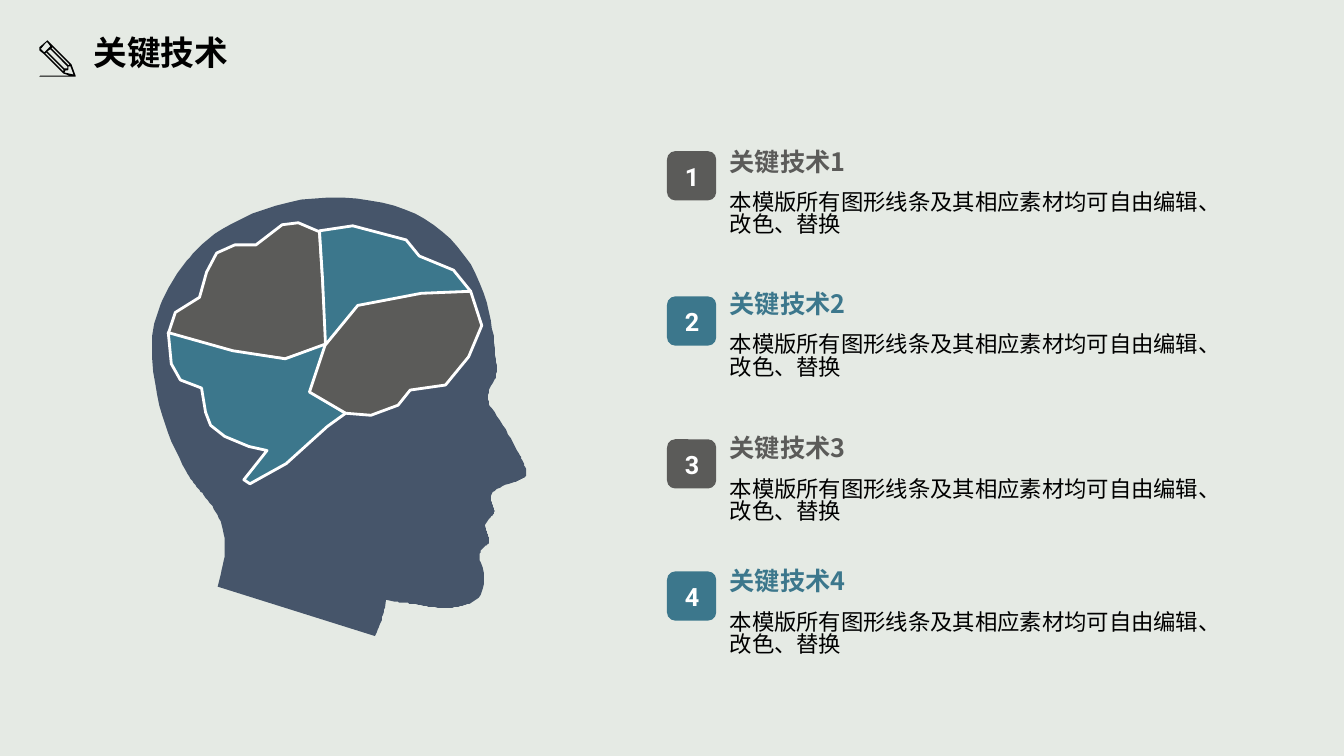
from pptx import Presentation
from pptx.dml.color import RGBColor
from pptx.enum import shapes as es, text as et
from pptx.oxml.ns import qn
from pptx.util import Cm, Pt

SANS = "Noto Sans CJK SC"
GREY, TEAL, NAVY = "5B5B59", "3C778C", "46556A"
WHITE, BLACK = "FFFFFF", "000000"
UNIT = Cm(0.0254)  # outline points are in hundredths of an inch
hue = RGBColor.from_string


def write(shape, words, size, color, font=SANS, bold=True,
          align=et.PP_ALIGN.LEFT, inset=(0.25, 0.13), space=0.83):
    frame = shape.text_frame
    frame.word_wrap = True
    frame.auto_size = et.MSO_AUTO_SIZE.NONE
    frame.vertical_anchor = et.MSO_ANCHOR.TOP
    frame.margin_left = frame.margin_right = Cm(inset[0])
    frame.margin_top = frame.margin_bottom = Cm(inset[1])
    para = frame.paragraphs[0]
    para.alignment = align
    para.line_spacing = space
    run = para.add_run()
    run.text = words
    run.font.size = Pt(size)
    run.font.bold = bold
    run.font.name = font
    run.font.color.rgb = hue(color)
    east = run.font._element.makeelement(qn("a:ea"), {"typeface": font})
    run.font._element.find(qn("a:latin")).addnext(east)


def draw(rings, fill, line=None):
    """Fill closed rings of points; later rings cut holes in the first."""
    pen = slide.shapes.build_freeform(*rings[0][0], scale=float(UNIT))
    pen.add_line_segments(rings[0][1:], close=True)
    for ring in rings[1:]:
        pen.move_to(*ring[0])
        pen.add_line_segments(ring[1:], close=True)
    shape = pen.convert_to_shape()
    shape.shadow.inherit = False
    shape.fill.solid()
    shape.fill.fore_color.rgb = hue(fill)
    if line:
        shape.line.color.rgb = hue(line)
        shape.line.width = Pt(2)
    else:
        shape.line.fill.background()


deck = Presentation()
deck.slide_width, deck.slide_height = Cm(33.87), Cm(19.05)
slide = deck.slides.add_slide(deck.slide_layouts[5])
slide.background.fill.solid()
slide.background.fill.fore_color.rgb = hue("E5EAE4")

title = slide.shapes.title
title.left, title.top, title.width, title.height = Cm(2.11), Cm(0.84), Cm(6.5), Cm(1.27)
write(title, "关键技术", 24, BLACK)

# Head: two numbers are a corner, six are a Bezier curve
head = [(516, 452)]
for step in [
    (512, 444, 498, 419, 488, 405), (481, 396, 484, 388, 490, 378),
    (494, 372, 493, 365, 491, 348), (491, 347, 491, 346, 491, 345),
    (489, 325, 483, 278, 454, 245), (426, 211, 385, 196, 326, 196),
    (271, 196, 221, 224, 201, 242), (193, 250, 178, 265, 167, 286),
    (154, 309, 149, 333, 151, 356), (155, 408, 170, 440, 185, 468),
    (191, 478, 197, 485, 202, 491), (211, 502, 219, 511, 222, 530),
    (225, 547, 221, 566, 216, 582), (372, 631),
    (376, 623, 380, 611, 382, 603), (383, 595), (392, 597),
    (394, 597, 397, 598, 401, 598), (403, 598, 407, 599, 410, 599),
    (419, 601, 431, 603, 442, 603), (452, 603, 459, 601, 466, 599),
    (480, 592, 484, 579, 477, 558), (474, 550, 476, 547, 482, 541),
    (483, 541, 483, 540, 484, 540), (488, 536, 482, 527, 482, 524),
    (481, 521), (485, 515), (488, 511, 492, 510, 490, 505),
    (489, 502, 488, 499, 487, 496), (485, 487, 498, 482, 511, 478),
    (515, 476, 520, 475, 522, 472), (524, 466, 518, 457, 516, 452),
]:
    if len(step) == 2:
        head.append(step)
        continue
    x0, y0 = head[-1]
    x1, y1, x2, y2, x3, y3 = step
    for i in range(1, 13):
        t = i / 12
        a, b, c, d = (1 - t) ** 3, 3 * t * (1 - t) ** 2, 3 * t * t * (1 - t), t ** 3
        head.append((a * x0 + b * x1 + c * x2 + d * x3,
                     a * y0 + b * y1 + c * y2 + d * y3))
draw([head], NAVY)

lobes = [
    (GREY, [(320, 276), (317, 230), (296, 221), (280, 223), (254, 243), (233, 243),
            (215, 251), (205, 270), (198, 295), (174, 310), (167, 331), (231, 349),
            (283, 356), (324, 342)]),
    (TEAL, [(308, 389), (324, 341), (283, 356), (231, 348), (167, 330), (170, 361),
            (179, 377), (200, 385), (204, 409), (209, 422), (223, 433), (247, 443),
            (265, 447), (242, 476), (248, 480), (284, 460), (325, 423), (343, 410)]),
    (GREY, [(467, 289), (418, 290), (355, 302), (323, 341), (307, 389), (343, 410),
            (368, 412), (395, 402), (407, 387), (442, 382), (465, 354), (478, 323)]),
    (TEAL, [(450, 268), (416, 254), (403, 238), (350, 224), (317, 229), (320, 276),
            (323, 342), (355, 303), (418, 291), (467, 289)]),
]
for color, edge in lobes:
    draw([edge], color, WHITE)

body = "本模版所有图形线条及其相应素材均可自由编辑、改色、替换"
# Badge top, heading top, body width
rows = [(3.81, 3.68, 12.93), (7.47, 7.26, 13.26), (11.07, 10.9, 12.93), (14.4, 14.25, 12.7)]
for n, (top, head_top, wide) in enumerate(rows, 1):
    color = GREY if n % 2 else TEAL
    badge = slide.shapes.add_shape(es.MSO_SHAPE.ROUNDED_RECTANGLE,
                                   Cm(16.81), Cm(top), Cm(1.24), Cm(1.24))
    label = slide.shapes.add_shape(es.MSO_SHAPE.RECTANGLE,
                                   Cm(17.02), Cm(top + 0.13), Cm(0.84), Cm(1.02))
    for part in (badge, label):
        part.shadow.inherit = False
        part.fill.solid()
        part.fill.fore_color.rgb = hue(color)
        part.line.fill.background()
    write(label, str(n), 18, WHITE, font="Roboto", align=et.PP_ALIGN.CENTER,
          inset=(0, 0.13), space=1.0)
    name = slide.shapes.add_textbox(Cm(18.14), Cm(head_top), Cm(4.06), Cm(1.02))
    write(name, f"关键技术{n}", 18, color)
    note = slide.shapes.add_textbox(Cm(18.06), Cm(head_top + 1), Cm(wide), Cm(1.75))
    write(note, body, 16, BLACK, bold=False, inset=(0.33, 0.18))

pencil = [
    [(75, 75), (71, 64), (48.2, 41), (47, 40.4), (45.5, 41), (39.4, 47), (39, 48.3),
     (39.4, 49.6), (43.5, 54), (62, 72.5), (63, 73.2), (69, 74.8), (39.6, 74.8),
     (39, 75.5), (39.6, 76.2), (74.5, 76.2), (75, 75.8)],
    [(72.6, 74.2), (64, 71.8), (64.6, 69.9), (67.2, 69.9), (68.2, 69), (68.2, 66.3), (70, 65.7)],
    [(52, 47), (69, 64), (68.2, 65), (51, 48)],
    [(50, 49), (67, 66), (67, 68.4), (64.4, 68.4), (47.4, 51.4)],
    [(40.4, 48.3), (40.7, 47.8), (46.4, 42), (47, 41.8), (47.4, 42), (50.4, 45.6),
     (44.3, 51.7), (40.7, 48.6)],
    [(46.3, 52.3), (63.3, 69.3), (62.7, 71.2), (45.3, 53.3)],
]
draw(pencil, BLACK)

deck.save("out.pptx")
